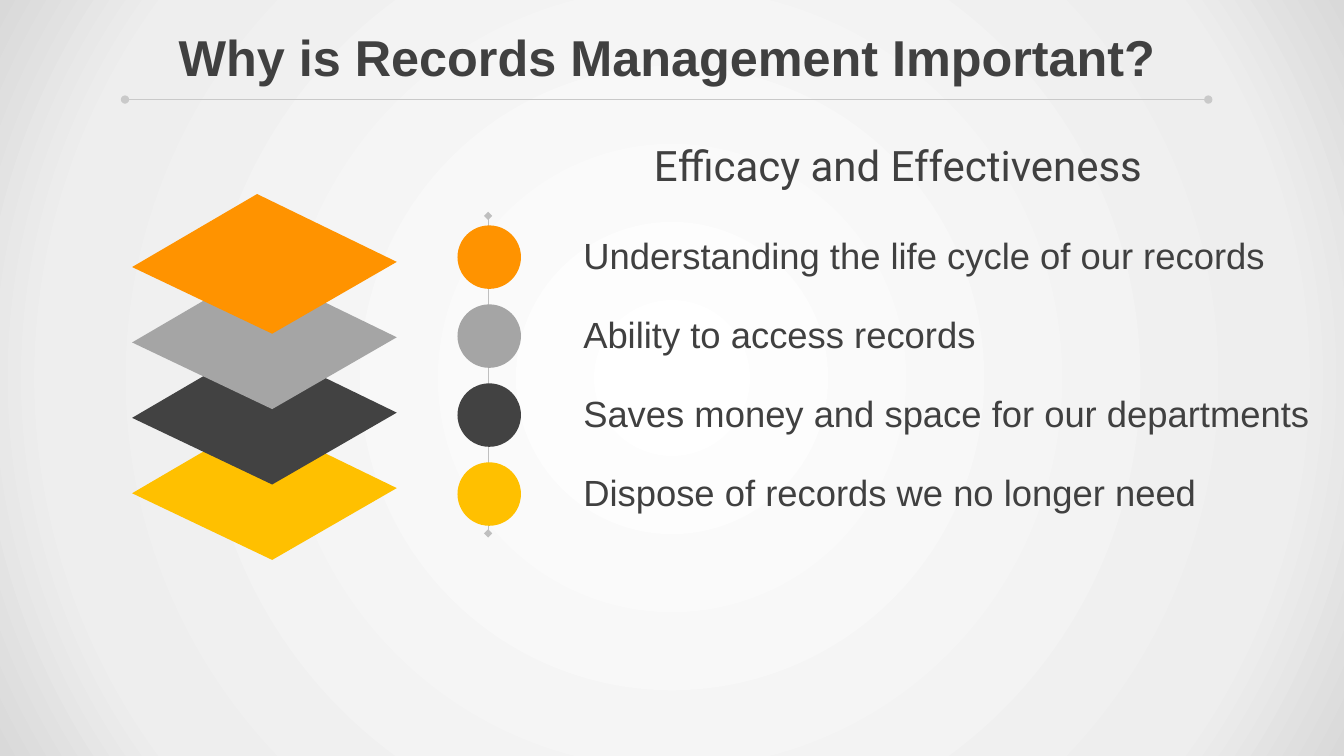
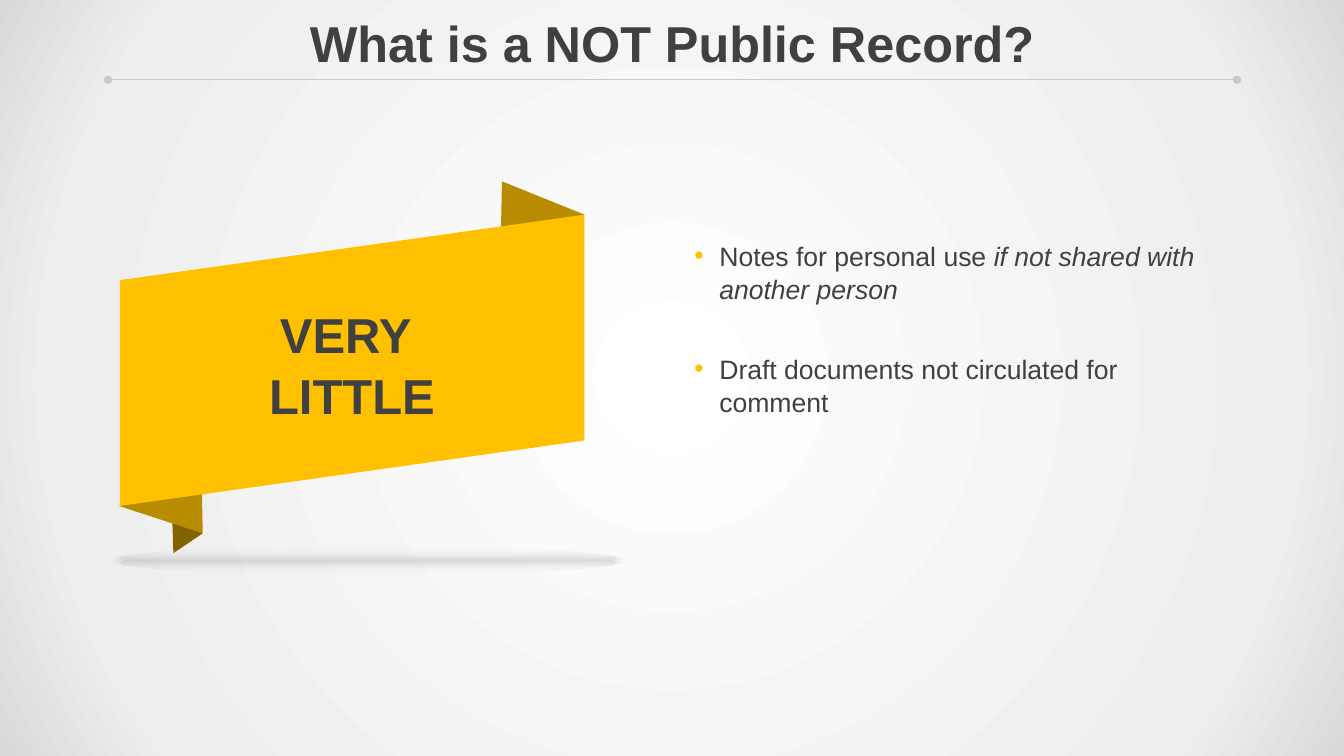
from dataclasses import dataclass

from lxml.etree import SubElement
from pptx import Presentation
from pptx.dml.color import RGBColor
from pptx.enum.shapes import MSO_CONNECTOR, MSO_SHAPE
from pptx.enum.text import MSO_ANCHOR, MSO_AUTO_SIZE, PP_ALIGN
from pptx.oxml import parse_xml
from pptx.oxml.ns import nsdecls, qn
from pptx.util import Cm, Pt

INK, RULE, AXIS = "404040", "C9C9C9", "BFBFBF"
ORANGE, GRAY, DARK, YELLOW = "FF9300", "A5A5A5", "424242", "FFC000"
FOLD, TAIL = "B88C00", "826300"
FONT = "Arial"


@dataclass
class Heading:
    """A title with the rule under it, in centimetres."""
    text: str
    left: float
    top: float
    width: float
    rule_start: float
    rule_end: float
    rule_y: float


@dataclass
class Layer:
    """One level of the stack with its label."""
    text: str
    color: str


@dataclass
class Facet:
    """One flat face of the ribbon, with corners in centimetres."""
    color: str
    points: list


@dataclass
class Bullet:
    """A bullet with an upright part and an italic part."""
    plain: str
    italic: str
    before: float


LAYERS = [
    Layer("Understanding the life cycle of our records", ORANGE),
    Layer("Ability to access records", GRAY),
    Layer("Saves money and space for our departments", DARK),
    Layer("Dispose of records we no longer need", YELLOW),
]
SHEET = [(6.48, 4.89), (10, 6.6), (6.86, 8.41), (3.33, 6.73)]
SHEET_PITCH, DOT_PITCH = 1.9, 1.99

RIBBON = [
    Facet(FOLD, [(14.73, 5.41), (12.62, 6.1), (12.65, 4.57)]),
    Facet(TAIL, [(5.11, 13.44), (4.34, 13.03), (4.37, 13.94)]),
    Facet(FOLD, [(3, 12.75), (5.11, 13.44), (5.08, 11.91)]),
    Facet(YELLOW, [(3.02, 7.06), (14.73, 5.41), (14.73, 11.1), (3.02, 12.75)]),
]
BULLETS = [
    Bullet("Notes for personal use ", "if not shared with another person", 0),
    Bullet("Draft documents not circulated for comment", "", 33),
]


def rgb(color: str) -> RGBColor:
    """Turn a hex string into a colour."""
    return RGBColor.from_string(color)


def set_gradient(parent, kind: str, stops: list) -> None:
    """Replace the gradient inside an element by a centred one."""
    gs = "".join(
        f'<a:gs pos="{pos * 1000}"><a:srgbClr val="{color}">'
        f'<a:alpha val="{alpha * 1000}"/></a:srgbClr></a:gs>'
        for pos, color, alpha in stops)
    old = next(parent.iter(qn("a:gradFill")))
    old.getparent().replace(old, parse_xml(
        f'<a:gradFill {nsdecls("a")} rotWithShape="1"><a:gsLst>{gs}</a:gsLst>'
        f'<a:path path="{kind}"><a:fillToRect l="50000" t="50000" r="50000" b="50000"/>'
        '</a:path></a:gradFill>'))


def add_run(p, text: str, size: float, font: str = FONT,
            bold: bool = False, italic: bool = False) -> None:
    """Add one formatted run."""
    r = p.add_run()
    r.text = text
    r.font.name, r.font.size = font, Pt(size)
    r.font.bold, r.font.italic = bold, italic
    r.font.color.rgb = rgb(INK)


def add_box(s, left: float, top: float, width: float, height: float):
    """Add a wrapping text box and return its text frame."""
    tf = s.shapes.add_textbox(Cm(left), Cm(top), Cm(width), Cm(height)).text_frame
    tf.word_wrap = True
    return tf


def add_line(s, start: tuple, end: tuple, color: str, width: float, cap: str) -> None:
    """Draw a straight line with the same marker on both ends."""
    cx = s.shapes.add_connector(MSO_CONNECTOR.STRAIGHT, *map(Cm, start + end))
    cx.line.color.rgb = rgb(color)
    cx.line.width = Pt(width)
    spPr = cx.element.spPr
    for tag in ("a:headEnd", "a:tailEnd"):
        SubElement(spPr.find(qn("a:ln")), qn(tag), type=cap)
    SubElement(spPr, qn("a:effectLst"))


def add_ellipse(s, left: float, top: float, width: float, height: float):
    """Add an ellipse without outline or shadow."""
    sp = s.shapes.add_shape(MSO_SHAPE.OVAL, Cm(left), Cm(top), Cm(width), Cm(height))
    sp.shadow.inherit = False
    sp.line.fill.background()
    return sp


def add_polygon(s, points: list, color: str) -> None:
    """Draw a filled closed outline."""
    corners = [(Cm(x), Cm(y)) for x, y in points]
    fb = s.shapes.build_freeform(*corners[0])
    fb.add_line_segments(corners[1:], close=True)
    sp = fb.convert_to_shape()
    sp.shadow.inherit = False
    sp.fill.solid()
    sp.fill.fore_color.rgb = rgb(color)
    sp.line.fill.background()


def add_titled_slide(prs, h: Heading):
    """Add a slide with its title and rule."""
    s = prs.slides.add_slide(prs.slide_layouts[5])
    sp = s.shapes.title
    sp.left, sp.top, sp.width, sp.height = map(Cm, (h.left, h.top, h.width, 1.98))
    tf = sp.text_frame
    tf.auto_size = MSO_AUTO_SIZE.NONE
    tf.vertical_anchor = MSO_ANCHOR.BOTTOM
    p = tf.paragraphs[0]
    p.alignment, p.line_spacing = PP_ALIGN.CENTER, 0.9
    add_run(p, h.text, 36, bold=True)
    add_line(s, (h.rule_start, h.rule_y), (h.rule_end, h.rule_y), RULE, 1, "oval")
    return s


def build_importance(prs) -> None:
    """Build the slide with the stack of sheets and the labelled dots."""
    s = add_titled_slide(prs, Heading(
        "Why is Records Management Important?", 3.05, 0.36, 27.53, 3.15, 30.45, 2.51))
    tf = add_box(s, 16.23, 3.38, 13.26, 2.31)
    add_run(tf.paragraphs[0], "Efficacy and Effectiveness", 30, font="Roboto")
    add_line(s, (12.3, 5.44), (12.3, 13.44), AXIS, 0.5, "diamond")
    for i, layer in enumerate(LAYERS):
        y = 5.68 + i * DOT_PITCH
        sp = add_ellipse(s, 11.53, y, 1.6, 1.6)
        sp.fill.solid()
        sp.fill.fore_color.rgb = rgb(layer.color)
        tf = add_box(s, 14.45, y + 0.06, 19.2, 1.37)
        add_run(tf.paragraphs[0], layer.text, 26)
    for i, layer in reversed(list(enumerate(LAYERS))):
        add_polygon(s, [(x, y + i * SHEET_PITCH) for x, y in SHEET], layer.color)


def build_exceptions(prs) -> None:
    """Build the slide with the ribbon and the bullets."""
    s = add_titled_slide(prs, Heading(
        "What is a NOT Public Record?", 2.34, 0, 29.21, 2.72, 31.17, 2.01))
    tf = add_box(s, 15.98, 5.87, 14.88, 5.97)
    for i, bullet in enumerate(BULLETS):
        p = tf.add_paragraph() if i else tf.paragraphs[0]
        pPr = p._p.get_or_add_pPr()
        pPr.set("marL", str(Cm(1.9)))
        pPr.set("indent", str(Cm(-0.63)))
        SubElement(SubElement(pPr, qn("a:buClr")), qn("a:srgbClr"), val=YELLOW)
        SubElement(pPr, qn("a:buFont"), typeface=FONT)
        SubElement(pPr, qn("a:buChar"), char="•")
        p.line_spacing, p.space_before = 1.05, Pt(bullet.before)
        add_run(p, bullet.plain, 19)
        if bullet.italic:
            add_run(p, bullet.italic, 19, italic=True)

    for facet in RIBBON:
        add_polygon(s, facet.points, facet.color)
    sp = add_ellipse(s, 2.79, 13.77, 12.98, 0.71)
    sp.fill.gradient()
    set_gradient(sp.element.spPr, "shape", [(0, "808080", 27), (100, "FFFFFF", 0)])

    tf = add_box(s, 3.02, 7.52, 11.71, 3.25)
    tf.vertical_anchor = MSO_ANCHOR.MIDDLE
    for i, word in enumerate(("VERY ", "LITTLE")):
        p = tf.add_paragraph() if i else tf.paragraphs[0]
        p.alignment, p.line_spacing = PP_ALIGN.CENTER, 1.05
        add_run(p, word, 35, bold=True)


def main() -> None:
    """Build and save the presentation."""
    prs = Presentation()
    prs.slide_width, prs.slide_height = Cm(33.87), Cm(19.05)
    master = prs.slide_master
    master.background.fill.gradient()
    set_gradient(master.element, "circle", [
        (0, "FFFFFF", 100), (81, "EEEEEE", 100), (100, "D9D9D9", 100)])
    build_importance(prs)
    build_exceptions(prs)
    prs.save("out.pptx")


if __name__ == "__main__":
    main()
